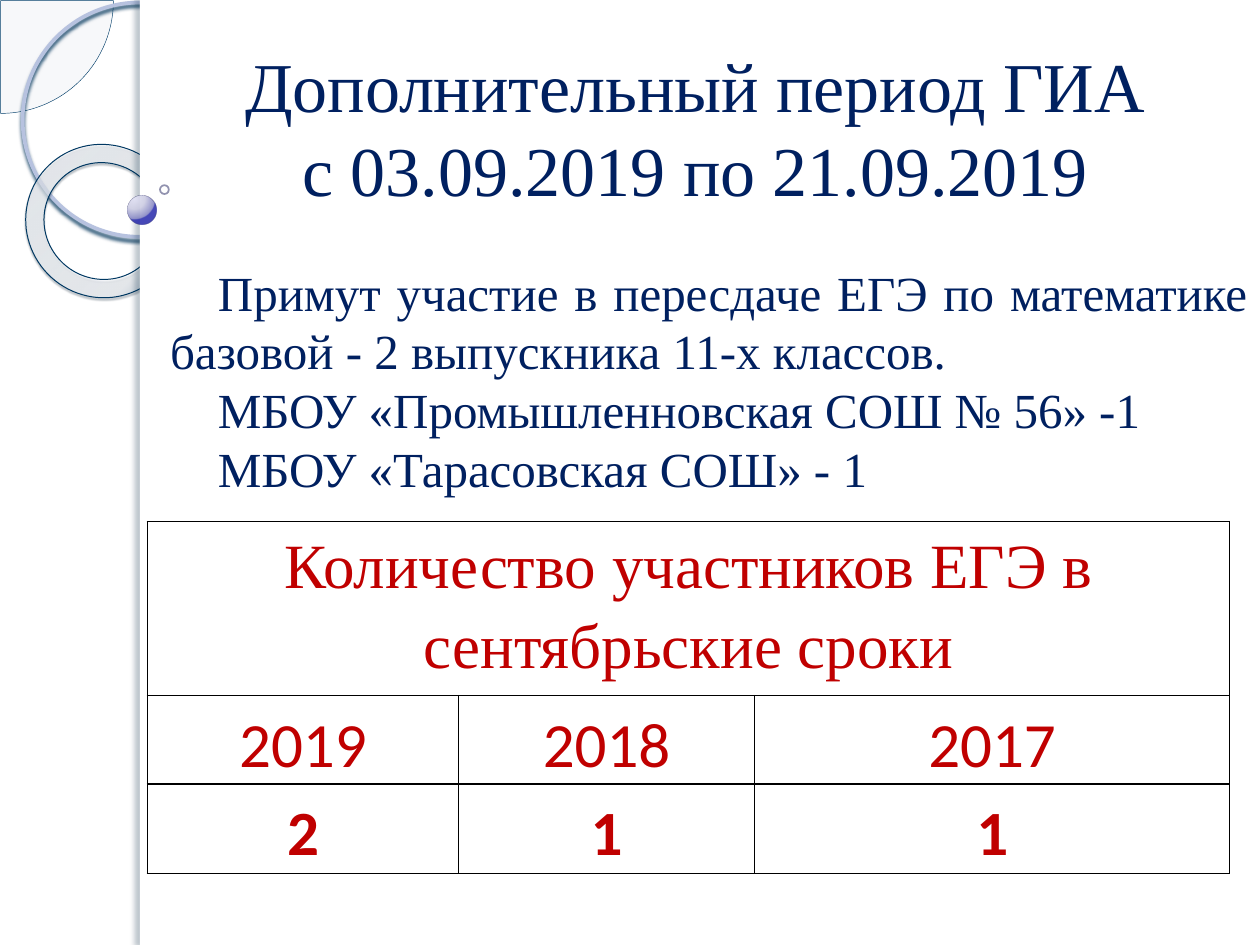
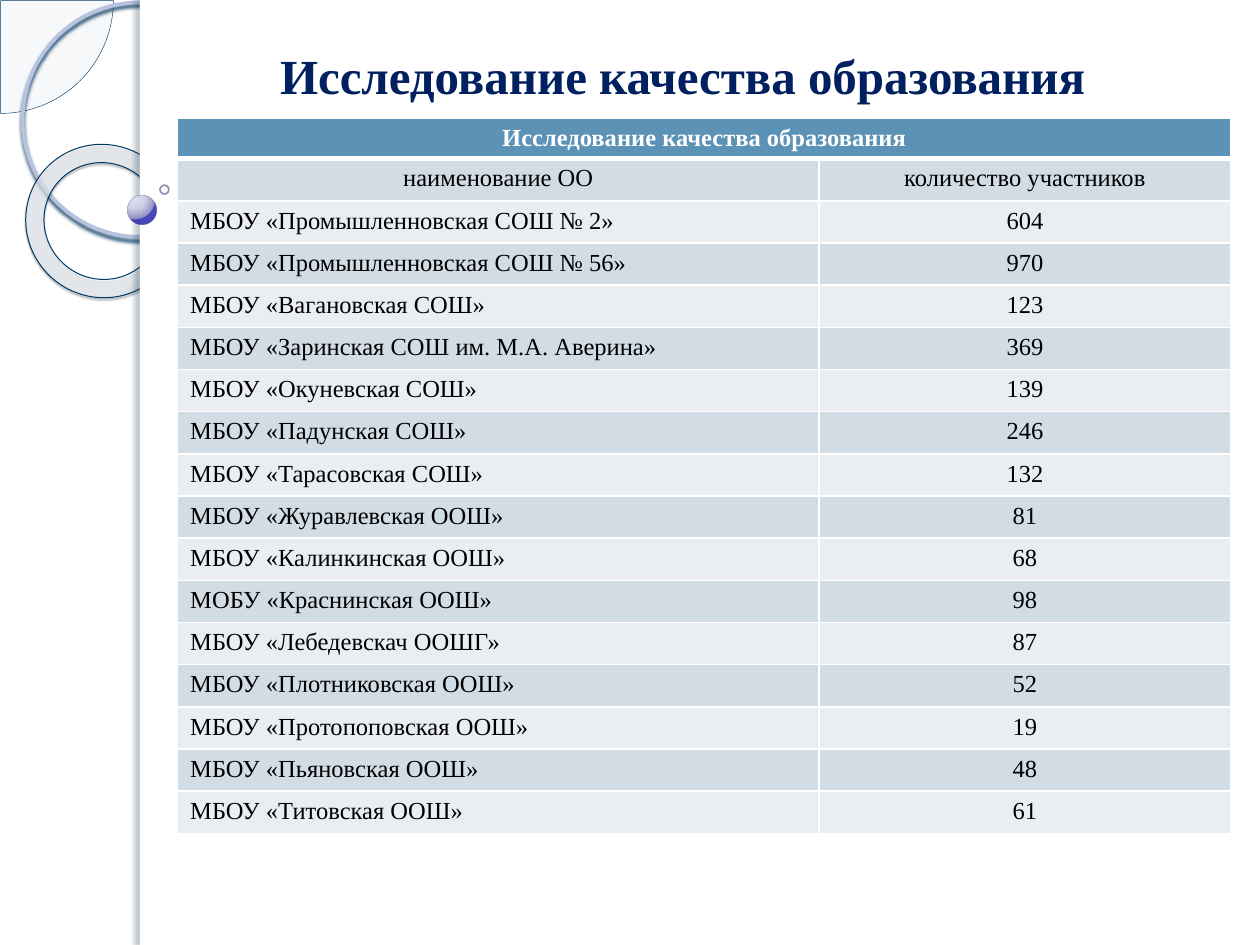
from dataclasses import dataclass

from lxml import etree
from pptx import Presentation
from pptx.dml.color import RGBColor
from pptx.enum.shapes import MSO_SHAPE
from pptx.enum.text import MSO_ANCHOR, MSO_AUTO_SIZE, PP_ALIGN
from pptx.oxml.ns import qn
from pptx.util import Inches, Pt

LEFT, CENTER, JUSTIFY = PP_ALIGN.LEFT, PP_ALIGN.CENTER, PP_ALIGN.JUSTIFY
TOP, BOTTOM = MSO_ANCHOR.TOP, MSO_ANCHOR.BOTTOM
PIE, ELLIPSE, DONUT, RECT = (MSO_SHAPE.PIE, MSO_SHAPE.OVAL, MSO_SHAPE.DONUT,
                             MSO_SHAPE.RECTANGLE)
TITLE_AND_CONTENT, TITLE_ONLY = 1, 5


@dataclass(frozen=True)
class Theme:
    serif: str = "Times New Roman"
    sans: str = "Calibri"
    navy: str = "002060"
    red: str = "C00000"
    black: str = "000000"
    white: str = "FFFFFF"
    header: str = "5C92B5"
    bands: tuple = ("D2DCE5", "EAEEF3")
    title: int = 40
    count: int = 36
    body: int = 28
    cell: int = 14


THEME = Theme()

# Content: additional exam period
PERIOD_TITLE = ["Дополнительный период ГИА ", "с 03.09.2019 по 21.09.2019 "]
RETAKES = [
    "Примут участие в пересдаче ЕГЭ по математике базовой - 2 выпускника 11-х классов.",
    "МБОУ «Промышленновская СОШ № 56» -1 ",
    "МБОУ «Тарасовская СОШ» - 1",
]
COUNTS_HEADING = "Количество участников ЕГЭ в сентябрьские сроки"
COUNTS = {"2019": "2", "2018": "1", "2017": "1"}

# Content: education quality study
QUALITY_TITLE = ["Исследование качества образования "]
QUALITY_HEADING = "Исследование качества образования"
QUALITY_COLUMNS = ("наименование ОО", "количество участников")
SCHOOLS = [
    ("МБОУ «Промышленновская СОШ № 2»", 604),
    ("МБОУ «Промышленновская СОШ № 56»", 970),
    ("МБОУ «Вагановская СОШ»", 123),
    ("МБОУ «Заринская СОШ им. М.А. Аверина»", 369),
    ("МБОУ «Окуневская СОШ»", 139),
    ("МБОУ «Падунская СОШ»", 246),
    ("МБОУ «Тарасовская СОШ»", 132),
    ("МБОУ «Журавлевская ООШ»", 81),
    ("МБОУ «Калинкинская ООШ»", 68),
    ("МОБУ «Краснинская ООШ»", 98),
    ("МБОУ «Лебедевскач ООШГ»", 87),
    ("МБОУ «Плотниковская ООШ»", 52),
    ("МБОУ «Протопоповская ООШ»", 19),
    ("МБОУ «Пьяновская ООШ»", 48),
    ("МБОУ «Титовская ООШ»", 61),
]

# Shared decoration, back to front. Gradient stops: position, colour, opacity;
# shadow: colour, opacity, blur, distance, direction; line: colour, width, opacity
DECORATION = [
    dict(kind=PIE, box=(-0.89, -0.89, 1.79, 1.79), adjust=(0, 54),
         fill="E7EAF0", opacity=33, line=("003C68", 0.25, 100)),
    dict(kind=ELLIPSE, box=(0.18, 0.02, 1.86, 1.86), line=("B7C2DF", 2.15, 100),
         shadow=("00345A", 85, 2, 2, 90)),
    dict(kind=DONUT, box=(0.2, 1.15, 1.23, 1.21), adjust=(0.12,), rotation=38.6,
         gradient=[(0, "F0F2F7", 70), (70, "F6F8FB", 55), (100, "003E6C", 60)],
         focus=(-408, -50, 508, 150), line=("003862", 0.58, 100),
         shadow=("001A2D", 35, 1, 1.2, 75)),
    dict(kind=RECT, box=(1.11, 0, 8.89, 7.5), fill=THEME.white),
    dict(kind=RECT, box=(1.11, 0, 0.08, 7.5), fill=THEME.white,
         shadow=("00233D", 25, 3, 3, 180)),
    dict(kind=ELLIPSE, box=(1.01, 1.55, 0.23, 0.23),
         gradient=[(0, "E2E2F5", 95), (50, "CDCDE3", 90),
                   (95, "8586C4", 88), (100, "2729AD", 85)],
         focus=(25, 12, 75, 88), line=("4D4E86", 0.16, 60)),
    dict(kind=ELLIPSE, box=(1.27, 1.47, 0.07, 0.07), line=("494A7A", 1, 60)),
]


# Helpers
def rgb(code):
    return RGBColor.from_string(code)


def add_xml(parent, tag, **attributes):
    return etree.SubElement(parent, qn(tag),
                            {key: str(value) for key, value in attributes.items()})


def add_color(parent, color, opacity=100):
    node = add_xml(parent, "a:srgbClr", val=color)
    add_xml(node, "a:alpha", val=opacity * 1000)


def place(shape, box):
    shape.left, shape.top, shape.width, shape.height = map(Inches, box)


def write(frame, lines, size, color, font=THEME.serif, bold=False, align=LEFT,
          anchor=TOP, spacing=None, indent=None):
    frame.word_wrap = True
    frame.vertical_anchor = anchor
    for number, line in enumerate(lines):
        paragraph = frame.add_paragraph() if number else frame.paragraphs[0]
        paragraph.alignment = align
        paragraph.space_before = Pt(0)
        if spacing:
            paragraph.line_spacing = spacing
        if indent is not None:
            properties = paragraph._p.get_or_add_pPr()
            properties.set("marL", "0")
            properties.set("indent", str(Inches(indent)))
            add_xml(properties, "a:buNone")
        run = paragraph.add_run()
        run.text = line
        run.font.name, run.font.size, run.font.bold = font, Pt(size), bold
        run.font.color.rgb = rgb(color)


def fill_placeholder(shape, box, lines, size, **style):
    place(shape, box)
    shape.text_frame.auto_size = MSO_AUTO_SIZE.NONE
    write(shape.text_frame, lines, size, THEME.navy, **style)


def set_borders(cell, color, bottom=1):
    properties = cell._tc.get_or_add_tcPr()
    for side, width in zip("LRTB", (1, 1, 1, bottom)):
        line = add_xml(properties, f"a:ln{side}", w=Pt(width))
        add_color(add_xml(line, "a:solidFill"), color)


def add_grid(slide, left, top, widths, heights):
    grid = slide.shapes.add_table(
        len(heights), len(widths), Inches(left), Inches(top),
        Inches(sum(widths)), Inches(sum(heights))).table
    for column, width in zip(grid.columns, widths):
        column.width = Inches(width)
    for row, height in zip(grid.rows, heights):
        row.height = Inches(height)
    grid.first_row = grid.horz_banding = False
    grid.cell(0, 0).merge(grid.cell(0, len(widths) - 1))
    return grid


# Decoration
def decorate(slide, kind, box, adjust=(), rotation=0, fill=None, opacity=100,
             gradient=None, focus=None, line=None, shadow=None):
    shape = slide.shapes.add_shape(kind, *map(Inches, box))
    shape.rotation = rotation
    for index, value in enumerate(adjust):
        shape.adjustments[index] = value
    properties = shape.element.spPr
    if fill:
        shape.fill.solid()
        shape.fill.fore_color.rgb = rgb(fill)
        add_xml(properties.find(".//" + qn("a:srgbClr")), "a:alpha", val=opacity * 1000)
    else:
        shape.fill.background()
    if gradient:
        blend = etree.Element(qn("a:gradFill"), rotWithShape="1")
        stops = add_xml(blend, "a:gsLst")
        for position, color, alpha in gradient:
            add_color(add_xml(stops, "a:gs", pos=position * 1000), color, alpha)
        circle = add_xml(blend, "a:path", path="circle")
        add_xml(circle, "a:fillToRect",
                **{side: value * 1000 for side, value in zip("ltrb", focus)})
        properties.replace(properties.find(qn("a:noFill")), blend)
    if line:
        color, width, alpha = line
        shape.line.color.rgb = rgb(color)
        shape.line.width = Pt(width)
        stroke = properties.find(qn("a:ln")).find(".//" + qn("a:srgbClr"))
        add_xml(stroke, "a:alpha", val=alpha * 1000)
    else:
        shape.line.fill.background()
    shape.shadow.inherit = False
    if shadow:
        color, alpha, blur, distance, direction = shadow
        cast = add_xml(properties.find(qn("a:effectLst")), "a:outerShdw",
                       blurRad=Pt(blur), dist=Pt(distance), dir=direction * 60000,
                       algn="ctr", rotWithShape=0)
        add_color(cast, color, alpha)
    return shape


def decorate_master(deck, slide):
    """Draw the shapes on a slide, then move them behind the master's text."""
    tree = deck.slide_master.shapes.element
    for number, part in enumerate(DECORATION):
        element = decorate(slide, **part).element
        element.find(".//" + qn("p:cNvPr")).set("id", str(100 + number))
        tree.insert(2 + number, element)


# Slides
def fill_period_slide(slide):
    fill_placeholder(slide.shapes.title, (1.17, 0.31, 8.83, 1.41), PERIOD_TITLE,
                     THEME.title, align=CENTER, anchor=BOTTOM)
    fill_placeholder(slide.placeholders[1], (1.25, 2.03, 8.75, 1.99), RETAKES,
                     THEME.body, align=JUSTIFY, indent=0.38)

    counts = add_grid(slide, 1.17, 4.14, (2.47, 2.35, 3.77), (1.38, 0.69, 0.71))
    rows = [[COUNTS_HEADING], list(COUNTS), list(COUNTS.values())]
    for r, row in enumerate(rows):
        for c in range(len(COUNTS)):
            cell = counts.cell(r, c)
            set_borders(cell, THEME.black)
            cell.fill.background()
            cell.margin_left = cell.margin_right = Inches(0.07)
            cell.margin_top = cell.margin_bottom = 0
            if c < len(row):
                write(cell.text_frame, [row[c]], THEME.count, THEME.red,
                      font=THEME.sans if r else THEME.serif, bold=r == 2,
                      align=CENTER, spacing=1.15)


def fill_quality_slide(slide):
    fill_placeholder(slide.shapes.title, (1.17, 0.31, 8.59, 0.57), QUALITY_TITLE,
                     THEME.body, bold=True, align=CENTER)

    rows = [(QUALITY_HEADING,), QUALITY_COLUMNS, *SCHOOLS]
    heading_height, table_height = 0.32, 5.68
    row_height = (table_height - heading_height) / (len(rows) - 1)
    heights = [heading_height] + [row_height] * (len(rows) - 1)
    quality = add_grid(slide, 1.41, 0.94, (5.09, 3.27), heights)
    for r, row in enumerate(rows):
        for c in range(len(QUALITY_COLUMNS)):
            cell = quality.cell(r, c)
            set_borders(cell, THEME.white, bottom=1 if r else 3)
            cell.fill.solid()
            cell.fill.fore_color.rgb = rgb(THEME.bands[(r - 1) % 2] if r else THEME.header)
            if c < len(row):
                write(cell.text_frame, [str(row[c])], THEME.cell,
                      THEME.black if r else THEME.white, bold=r == 0,
                      align=LEFT if r > 1 and c == 0 else CENTER)


def main():
    deck = Presentation()
    deck.slide_width, deck.slide_height = Inches(10), Inches(7.5)
    period = deck.slides.add_slide(deck.slide_layouts[TITLE_AND_CONTENT])
    quality = deck.slides.add_slide(deck.slide_layouts[TITLE_ONLY])
    decorate_master(deck, period)
    fill_period_slide(period)
    fill_quality_slide(quality)
    deck.save("out.pptx")


if __name__ == "__main__":
    main()
